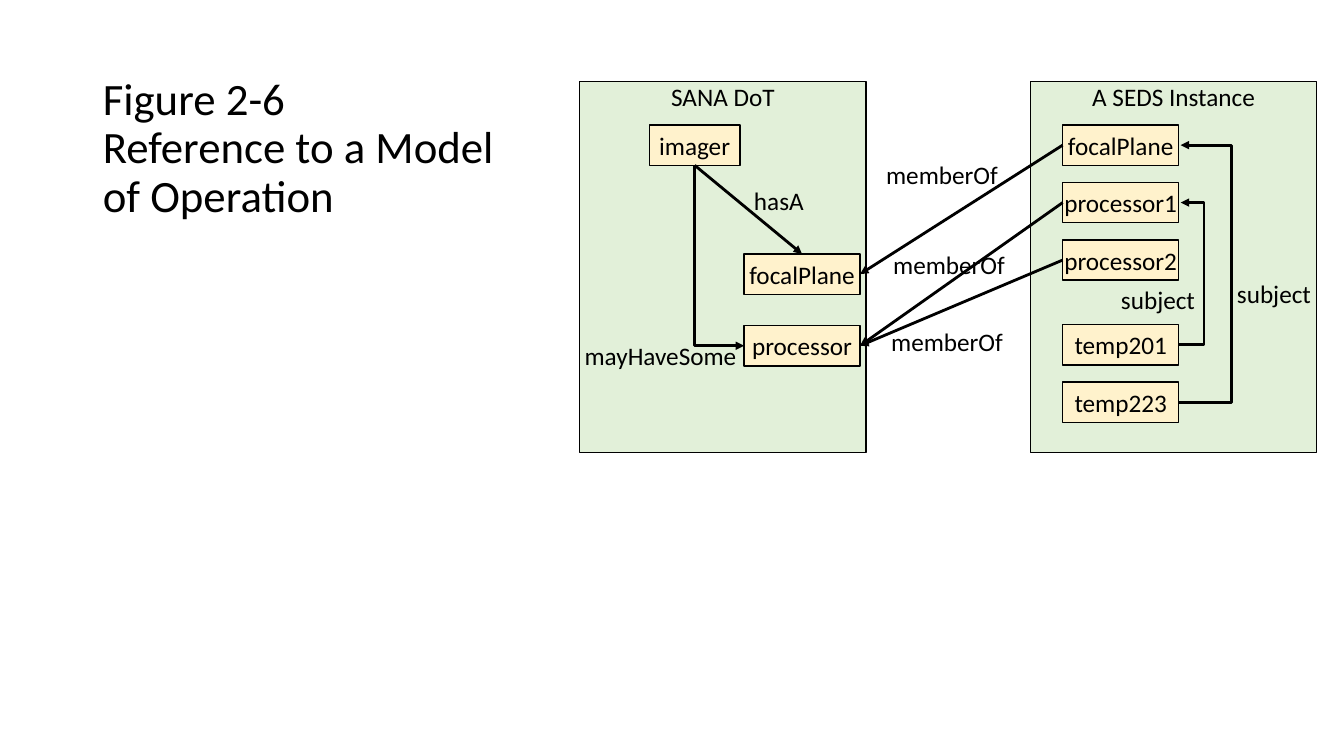
from lxml import etree
from pptx import Presentation
from pptx.dml.color import RGBColor
from pptx.enum.shapes import MSO_CONNECTOR, MSO_SHAPE
from pptx.enum.text import MSO_ANCHOR, MSO_AUTO_SIZE, PP_ALIGN
from pptx.oxml.ns import qn
from pptx.util import Inches, Pt

RECTANGLE = MSO_SHAPE.RECTANGLE
STRAIGHT, ELBOW = MSO_CONNECTOR.STRAIGHT, MSO_CONNECTOR.ELBOW
TOP, MIDDLE, BOTTOM = MSO_ANCHOR.TOP, MSO_ANCHOR.MIDDLE, MSO_ANCHOR.BOTTOM
LEFT, CENTER = PP_ALIGN.LEFT, PP_ALIGN.CENTER
FIXED, GROW = MSO_AUTO_SIZE.NONE, MSO_AUTO_SIZE.SHAPE_TO_FIT_TEXT
SITE_TOP, SITE_LEFT, SITE_BOTTOM, SITE_RIGHT = range(4)

COLORS = {"ink": "000000", "panel": "E2F0D9", "box": "FFF2CC"}
FONT = "Calibri"
BOX_WIDTH, BOX_HEIGHT = 1.15, 0.4
MODEL_LEFT, INSTANCE_LEFT = 7.38, 10.54
LOOP_OFFSET = 0.02


def color(name):
    return RGBColor.from_string(COLORS[name])


def write_text(shape, text, size=18, align=LEFT, anchor=TOP, inset=None,
               wrap=True, auto_size=FIXED, spacing=None):
    frame = shape.text_frame
    frame.word_wrap = wrap
    frame.auto_size = auto_size
    frame.vertical_anchor = anchor
    if inset is not None:
        frame.margin_left = frame.margin_right = Inches(inset)
        frame.margin_top = frame.margin_bottom = Inches(inset)
    paragraph = frame.paragraphs[0]
    paragraph.text = text
    paragraph.alignment = align
    paragraph.line_spacing = spacing
    for run in paragraph.runs:
        run.font.name = FONT
        run.font.size = Pt(size)
        run.font.color.rgb = color("ink")


class Diagram:
    def __init__(self, slide):
        self.slide = slide
        self.shapes = slide.shapes

    def title(self, text, left, top, width, height):
        title = self.shapes.title
        title.left, title.top = Inches(left), Inches(top)
        title.width, title.height = Inches(width), Inches(height)
        write_text(title, text, size=32, anchor=BOTTOM, spacing=0.9)

    def rectangle(self, text, left, top, width, height, fill, anchor):
        shape = self.shapes.add_shape(
            RECTANGLE, Inches(left), Inches(top), Inches(width), Inches(height))
        shape.shadow.inherit = False
        shape.fill.solid()
        shape.fill.fore_color.rgb = color(fill)
        shape.line.color.rgb = color("ink")
        shape.line.width = Pt(1)
        write_text(shape, text, align=CENTER, anchor=anchor, inset=0)
        return shape

    def panel(self, text, left):
        return self.rectangle(text, left, 0.81, 2.84, 3.68, "panel", TOP)

    def box(self, text, left, top, width=BOX_WIDTH):
        return self.rectangle(text, left, top, width, BOX_HEIGHT, "box", MIDDLE)

    def label(self, text, left, top, width):
        shape = self.shapes.add_textbox(
            Inches(left), Inches(top), Inches(width), Inches(0.4))
        write_text(shape, text, wrap=False, auto_size=GROW)

    def arrow(self, source, source_site, target, target_site, kind=STRAIGHT):
        connector = self.shapes.add_connector(kind, 0, 0, 0, 0)
        connector.begin_connect(source, source_site)
        connector.end_connect(target, target_site)
        connector.line.color.rgb = color("ink")
        connector.line.width = Pt(2)
        line = connector.line._get_or_add_ln()
        etree.SubElement(line, qn("a:tailEnd"), type="triangle")
        etree.SubElement(connector._element.spPr, qn("a:effectLst"))
        return connector

    def loop_arrow(self, source, target, reach):
        connector = self.arrow(source, SITE_RIGHT, target, SITE_RIGHT, ELBOW)
        connector.end_x += Inches(LOOP_OFFSET)
        geometry = connector._element.spPr.find(qn("a:prstGeom"))
        adjustments = geometry.find(qn("a:avLst"))
        bend = round(reach / LOOP_OFFSET * 100000)
        etree.SubElement(adjustments, qn("a:gd"), name="adj1", fmla=f"val {bend}")

    def corner_arrow(self, source, target):
        connector = self.arrow(source, SITE_BOTTOM, target, SITE_LEFT, ELBOW)
        width, height = connector.width, connector.height
        shift = (height - width) // 2
        connector.left -= shift
        connector.top += shift
        connector.width, connector.height = height, width
        properties = connector._element.spPr
        properties.find(qn("a:prstGeom")).set("prst", "bentConnector2")
        transform = properties.find(qn("a:xfrm"))
        transform.set("rot", str(270 * 60000))
        transform.set("flipH", "1")


def main():
    presentation = Presentation()
    presentation.slide_width = Inches(13.33)
    presentation.slide_height = Inches(7.5)
    slide = presentation.slides.add_slide(presentation.slide_layouts[5])
    diagram = Diagram(slide)
    diagram.title("Figure 2-6\vReference to a Model of Operation", 0.92, 0.5, 4.3, 1.75)

    diagram.panel("SANA DoT", 5.75)
    diagram.panel("A SEDS Instance", 10.22)

    imager = diagram.box("imager", 6.44, 1.24, 0.9)
    focal_plane = diagram.box("focalPlane", MODEL_LEFT, 2.52)
    processor = diagram.box("processor", MODEL_LEFT, 3.23)
    instances = {
        name: diagram.box(name, INSTANCE_LEFT, top)
        for name, top in [("focalPlane", 1.24), ("processor1", 1.81),
                          ("processor2", 2.38), ("temp201", 3.22), ("temp223", 3.79)]
    }

    diagram.arrow(imager, SITE_BOTTOM, focal_plane, SITE_TOP)
    diagram.corner_arrow(imager, processor)
    for name, member in [("focalPlane", focal_plane), ("processor1", processor),
                         ("processor2", processor)]:
        diagram.arrow(instances[name], SITE_LEFT, member, SITE_RIGHT)
    diagram.loop_arrow(instances["temp201"], instances["processor1"], 0.25)
    diagram.loop_arrow(instances["temp223"], instances["focalPlane"], 0.52)

    for text, left, top, width in [
        ("hasA", 7.38, 1.79, 0.7),
        ("mayHaveSome", 5.7, 3.33, 1.72),
        ("memberOf", 8.69, 1.53, 1.32),
        ("memberOf", 8.76, 2.42, 1.32),
        ("memberOf", 8.74, 3.19, 1.32),
        ("subject", 11.02, 2.77, 0.94),
        ("subject", 12.17, 2.71, 0.94),
    ]:
        diagram.label(text, left, top, width)

    presentation.save("out.pptx")


if __name__ == "__main__":
    main()
